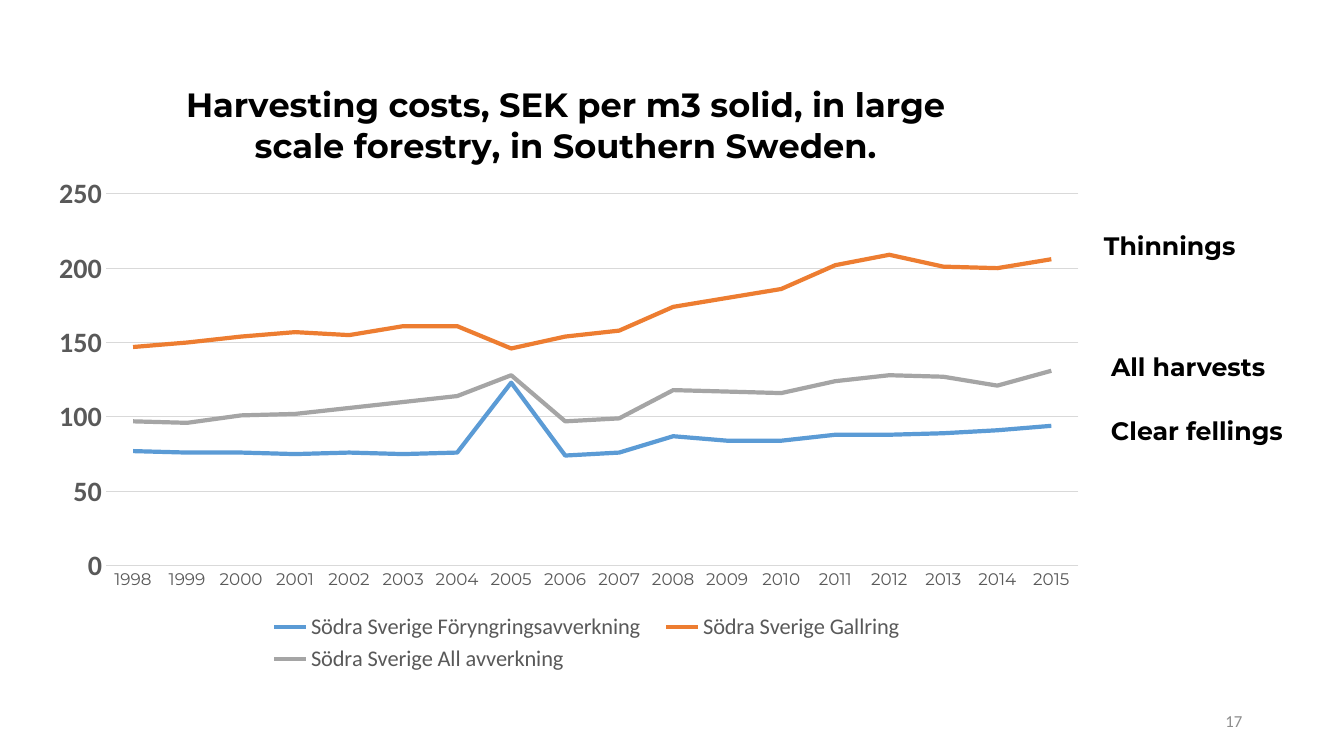
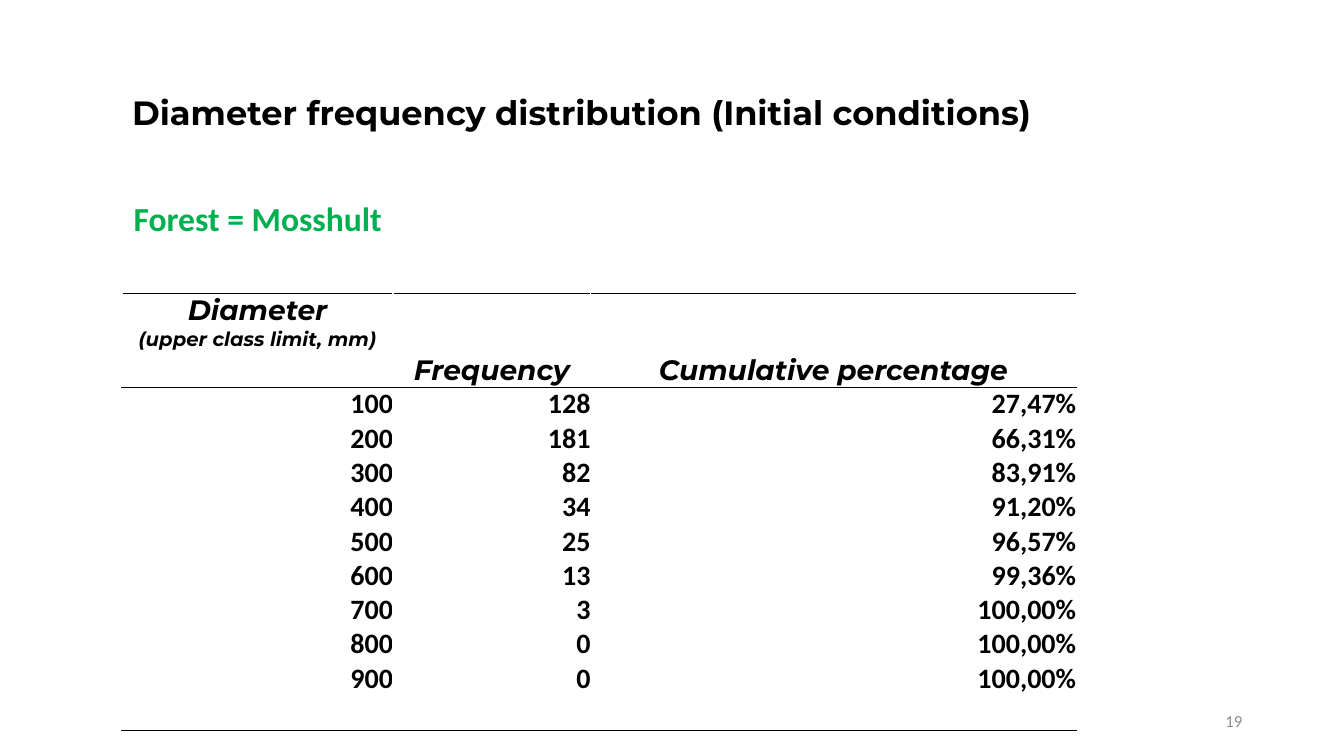
from dataclasses import dataclass

from lxml.etree import SubElement
from pptx import Presentation
from pptx.chart.data import CategoryChartData
from pptx.dml.color import RGBColor
from pptx.enum.chart import XL_CHART_TYPE as Chart, XL_LEGEND_POSITION as Legend, XL_TICK_MARK as Tick
from pptx.enum.text import MSO_ANCHOR as Anchor, MSO_AUTO_SIZE as Fit, PP_ALIGN as Align
from pptx.oxml.ns import qn
from pptx.util import Inches, Pt

BLACK = RGBColor(0x00, 0x00, 0x00)
GREEN = RGBColor(0x00, 0xB0, 0x50)
DARK_GRAY = RGBColor(0x59, 0x59, 0x59)
NUMBER_GRAY = RGBColor(0x8C, 0x8C, 0x8C)
GRID_GRAY = RGBColor(0xD9, 0xD9, 0xD9)
BLUE = RGBColor(0x5B, 0x9B, 0xD5)
ORANGE = RGBColor(0xED, 0x7D, 0x31)
GRAY = RGBColor(0xA5, 0xA5, 0xA5)
HEAD_FONT, BODY_FONT = "Montserrat", "Calibri"
TITLE_STYLE = dict(size=24, font=HEAD_FONT, bold=True)
TITLE_ONLY, BLANK = 5, 6


@dataclass
class Box:
    x: int
    y: int
    w: int
    h: int

    def cut(self, x, y, w, h):
        return Box(self.x + int(self.w * x / 100), self.y + int(self.h * y / 100),
                   int(self.w * w / 100), int(self.h * h / 100))

    def edges(self):
        return self.x, self.y, self.w, self.h


PAGE = Box(0, 0, Inches(13.33), Inches(7.5))

YEARS = [str(year) for year in range(1998, 2016)]
COSTS = [
    ("Södra Sverige Föryngringsavverkning", BLUE,
     [77, 76, 76, 75, 76, 75, 76, 123, 74, 76, 87, 84, 84, 88, 88, 89, 91, 94]),
    ("Södra Sverige Gallring", ORANGE,
     [147, 150, 154, 157, 155, 161, 161, 146, 154, 158, 174, 180, 186, 202, 209, 201, 200, 206]),
    ("Södra Sverige All avverkning", GRAY,
     [97, 96, 101, 102, 106, 110, 114, 128, 97, 99, 118, 117, 116, 124, 128, 127, 121, 131]),
]
LINE_LABELS = [
    ("Thinnings", (0, 0, 73, 17.8)),
    ("All harvests", (3.3, 53.3, 86.7, 17.8)),
    ("Clear fellings", (3.3, 81.3, 94.7, 17.8)),
]
DIAMETERS = [
    ("100", "128", "27,47%"),
    ("200", "181", "66,31%"),
    ("300", "82", "83,91%"),
    ("400", "34", "91,20%"),
    ("500", "25", "96,57%"),
    ("600", "13", "99,36%"),
    ("700", "3", "100,00%"),
    ("800", "0", "100,00%"),
    ("900", "0", "100,00%"),
    ("", "", ""),
]


def style_font(f, size, color=BLACK, font=BODY_FONT, bold=False, italic=False):
    f.size, f.name, f.bold, f.italic = Pt(size), font, bold, italic
    f.color.rgb = color


def write(p, text, align=None, **style):
    if align is not None:
        p.alignment = align
    if text:
        r = p.add_run()
        r.text = text
        style_font(r.font, **style)
    else:
        style_font(p.font, **style)


def add_text(s, box, text, wrap=False, anchor=Anchor.TOP, **style):
    tf = s.shapes.add_textbox(*box.edges()).text_frame
    tf.word_wrap, tf.vertical_anchor = wrap, anchor
    write(tf.paragraphs[0], text, **style)


def add_number(s, number):
    add_text(s, PAGE.cut(70.67, 92.67, 22.5, 5.33), number, wrap=True, anchor=Anchor.MIDDLE,
             align=Align.RIGHT, size=12, color=NUMBER_GRAY)


def set_title(s, box, text):
    sp = s.shapes.title
    sp.left, sp.top, sp.width, sp.height = box.edges()
    tf = sp.text_frame
    tf.word_wrap, tf.auto_size, tf.vertical_anchor = True, Fit.NONE, Anchor.TOP
    write(tf.paragraphs[0], text, align=Align.LEFT, **TITLE_STYLE)


def set_layout(element, position, inner=False, **shares):
    for old in element.findall(qn("c:layout")):
        element.remove(old)
    layout = SubElement(element, qn("c:layout"))
    element.insert(position, layout)
    manual = SubElement(layout, qn("c:manualLayout"))
    if inner:
        SubElement(manual, qn("c:layoutTarget")).set("val", "inner")
    for mode in ("xMode", "yMode"):
        SubElement(manual, qn(f"c:{mode}")).set("val", "edge")
    for name, share in shares.items():
        SubElement(manual, qn(f"c:{name}")).set("val", str(share))


def style_line(line, color, width):
    line.color.rgb, line.width = color, Pt(width)


def cost_chart(s, box):
    data = CategoryChartData()
    data.categories = YEARS
    for name, _, values in COSTS:
        data.add_series(name, values)
    chart = s.shapes.add_chart(Chart.LINE, *box.edges(), data).chart
    style_font(chart.font, 10)

    chart.has_title = True
    chart.chart_title.include_in_layout = False
    write(chart.chart_title.text_frame.paragraphs[0],
          "Harvesting costs, SEK per m3 solid, in large scale forestry, in Southern Sweden.", **TITLE_STYLE)

    chart.plots[0].vary_by_categories = False
    for series, (_, color, _) in zip(chart.plots[0].series, COSTS):
        series.smooth = False
        style_line(series.format.line, color, 3)

    years, costs = chart.category_axis, chart.value_axis
    for axis in (years, costs):
        axis.major_tick_mark = axis.minor_tick_mark = Tick.NONE
    style_font(years.tick_labels.font, 12, DARK_GRAY, HEAD_FONT)
    style_line(years.format.line, GRID_GRAY, 0.75)
    style_font(costs.tick_labels.font, 20, DARK_GRAY, bold=True)
    costs.minimum_scale, costs.maximum_scale, costs.major_unit = 0, 250, 50
    costs.format.line.fill.background()
    style_line(costs.major_gridlines.format.line, GRID_GRAY, 0.75)

    chart.has_legend = True
    legend = chart.legend
    legend.position, legend.include_in_layout = Legend.BOTTOM, False
    style_font(legend.font, 16, DARK_GRAY)
    root = chart._chartSpace
    set_layout(root.xpath(".//c:plotArea")[0], 0, inner=True, x=0.07, y=0.22, w=0.91, h=0.6)
    set_layout(root.xpath(".//c:legend")[0], 1, x=0.21, y=0.89, w=0.62, h=0.11)


def line_labels(s, box):
    for text, place in LINE_LABELS:
        add_text(s, box.cut(*place), text, size=18, font=HEAD_FONT, bold=True)


def set_border(cell, side, width):
    tc_pr = cell._tc.get_or_add_tcPr()
    line = SubElement(tc_pr, qn(f"a:{side}"), w=str(Pt(width)))
    fill = SubElement(line, qn("a:solidFill"))
    SubElement(fill, qn("a:srgbClr"), val=str(BLACK))


def diameter_table(s, box):
    table = s.shapes.add_table(len(DIAMETERS) + 1, 3, *box.edges()).table
    table.first_row = table.horz_banding = False
    for column, share in zip(table.columns, (28.4, 20.7, 50.9)):
        column.width = int(box.w * share / 100)
    for i, row in enumerate(table.rows):
        row.height = int(box.h * (7.85 if i else 21.5) / 100)

    head = dict(align=Align.CENTER, font=HEAD_FONT, bold=True, italic=True)
    body = dict(align=Align.RIGHT, size=20, bold=True)
    rows = [("Diameter", "Frequency", "Cumulative percentage"), *DIAMETERS]
    for i, texts in enumerate(rows):
        for j, text in enumerate(texts):
            cell = table.cell(i, j)
            cell.margin_left = cell.margin_right = cell.margin_top = cell.margin_bottom = 0
            cell.vertical_anchor = Anchor.BOTTOM
            write(cell.text_frame.paragraphs[0], text, **(body if i else dict(head, size=20)))
            if i == 0:
                set_border(cell, "lnT", 1)
                set_border(cell, "lnB", 0.5)
            elif i == 1:
                set_border(cell, "lnT", 0.5)
            elif i == len(rows) - 1:
                set_border(cell, "lnB", 1)
            cell.fill.background()

    corner = table.cell(0, 0)
    corner.vertical_anchor = Anchor.TOP
    write(corner.text_frame.add_paragraph(), "(upper class limit, mm)", size=14, **head)


def cost_slide(prs):
    s = prs.slides.add_slide(prs.slide_layouts[BLANK])
    cost_chart(s, PAGE.cut(2.33, 7.6, 79.5, 82))
    line_labels(s, PAGE.cut(81.4, 29.87, 16, 30))
    add_number(s, "17")


def diameter_slide(prs):
    s = prs.slides.add_slide(prs.slide_layouts[TITLE_ONLY])
    set_title(s, PAGE.cut(9.08, 11.47, 74, 6.67), "Diameter frequency distribution (Initial conditions)")
    add_text(s, PAGE.cut(9.08, 25.47, 20.2, 6.67), "Forest = Mosshult",
             align=Align.CENTER, size=24, color=GREEN, bold=True)
    diameter_table(s, PAGE.cut(9.08, 38.8, 71, 57.8))
    add_number(s, "19")


def main():
    prs = Presentation()
    prs.slide_width, prs.slide_height = PAGE.w, PAGE.h
    cost_slide(prs)
    diameter_slide(prs)
    prs.save("out.pptx")


if __name__ == "__main__":
    main()
